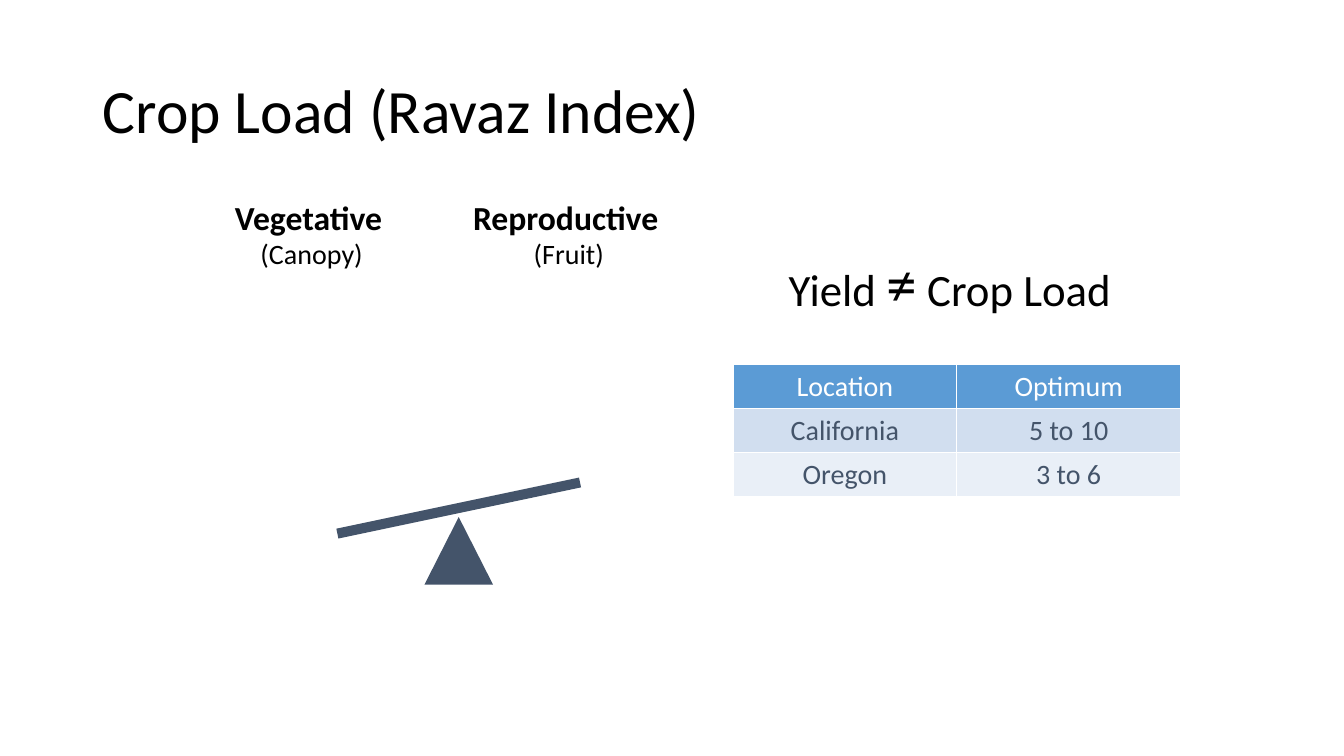
from dataclasses import dataclass

import pptx
import pptx.dml.color
import pptx.enum.shapes
import pptx.enum.text
import pptx.oxml
import pptx.oxml.ns
import pptx.util

Inches = pptx.util.Inches
Align = pptx.enum.text.PP_ALIGN
Anchor = pptx.enum.text.MSO_ANCHOR
Preset = pptx.enum.shapes.MSO_SHAPE

BLACK, WHITE, SLATE = "000000", "FFFFFF", "44546A"


@dataclass
class Span:
    text: str
    size: float
    bold: bool = False
    color: str = BLACK


@dataclass
class Label:
    place: tuple[float, float, float, float]
    lines: list[list[Span]]


@dataclass
class Solid:
    preset: int
    place: tuple[float, float, float, float]
    rotation: float = 0


@dataclass
class Row:
    texts: tuple[str, str]
    fill: str
    color: str


LABELS = [
    Label((2.08, 1.9, 1.96, 0.83), [[Span("Vegetative", 24, True)], [Span(" (Canopy)", 20)]]),
    Label((4.55, 1.9, 2.12, 0.83), [[Span("Reproductive", 24, True)], [Span(" (Fruit)", 20)]]),
    Label((7.17, 2.38, 4.5, 0.83), [[Span("Yield ", 32), Span("≠", 44), Span(" Crop Load", 32)]]),
]
SEESAW = [
    Solid(Preset.ISOSCELES_TRIANGLE, (4.21, 5.13, 0.68, 0.67)),
    Solid(Preset.RECTANGLE, (3.32, 4.99, 2.46, 0.1), 348.1),
]
OPTIMUM_ROWS = [
    Row(("Location", "Optimum"), "5B9BD5", WHITE),
    Row(("California", "5 to 10"), "D1DEEF", SLATE),
    Row(("Oregon", "3 to 6"), "E9EFF7", SLATE),
]


def rgb(color: str) -> pptx.dml.color.RGBColor:
    return pptx.dml.color.RGBColor.from_string(color)


def write_line(para, spans: list[Span], **layout) -> None:
    for name, value in layout.items():
        setattr(para, name, value)
    for span in spans:
        run = para.add_run()
        run.text = span.text
        style = {"name": "Calibri", "size": pptx.util.Pt(span.size), "bold": span.bold}
        for name, value in style.items():
            setattr(run.font, name, value)
        run.font.color.rgb = rgb(span.color)


def write_title(title, text: str) -> None:
    place = {"left": 0.92, "top": 0.4, "width": 11.5, "height": 1.45}
    for name, value in place.items():
        setattr(title, name, Inches(value))
    title.text_frame.vertical_anchor = Anchor.MIDDLE
    write_line(title.text_frame.paragraphs[0], [Span(text, 44)],
               alignment=Align.LEFT, line_spacing=0.9)


def draw_label(page, label: Label) -> None:
    box = page.shapes.add_textbox(*map(Inches, label.place))
    frame = box.text_frame
    frame.word_wrap = True
    frame.auto_size = pptx.enum.text.MSO_AUTO_SIZE.SHAPE_TO_FIT_TEXT
    for number, spans in enumerate(label.lines):
        para = frame.add_paragraph() if number else frame.paragraphs[0]
        write_line(para, spans, alignment=Align.CENTER)


def draw_solid(page, solid: Solid) -> None:
    shape = page.shapes.add_shape(solid.preset, *map(Inches, solid.place))
    shape.rotation = solid.rotation
    shape.shadow.inherit = False
    shape.fill.solid()
    shape.fill.fore_color.rgb = rgb(SLATE)
    shape.line.fill.background()


def add_borders(cell) -> None:
    properties = cell._tc.get_or_add_tcPr()
    for position, side in enumerate(("lnL", "lnR", "lnT", "lnB")):
        border = pptx.oxml.parse_xml(
            f'<a:{side} {pptx.oxml.ns.nsdecls("a")} w="12192"><a:solidFill>'
            f'<a:srgbClr val="{WHITE}"/></a:solidFill></a:{side}>')
        properties.insert(position, border)


def draw_table(page, rows: list[Row]) -> None:
    place = map(Inches, (7.27, 3.62, 4.44, 1.3))
    table = page.shapes.add_table(len(rows), 2, *place).table
    for line, row in zip(table.rows, rows):
        for cell, text in zip(line.cells, row.texts):
            cell.fill.solid()
            cell.fill.fore_color.rgb = rgb(row.fill)
            write_line(cell.text_frame.paragraphs[0], [Span(text, 20, color=row.color)],
                       alignment=Align.CENTER)
            add_borders(cell)


def main() -> None:
    deck = pptx.Presentation()
    deck.slide_width, deck.slide_height = Inches(13.33), Inches(7.5)
    page = deck.slides.add_slide(deck.slide_layouts[5])
    write_title(page.shapes.title, "Crop Load (Ravaz Index)")

    # Seesaw and headings
    for solid in SEESAW:
        draw_solid(page, solid)
    for label in LABELS:
        draw_label(page, label)

    # Optimum by location
    draw_table(page, OPTIMUM_ROWS)
    deck.save("out.pptx")


if __name__ == "__main__":
    main()
